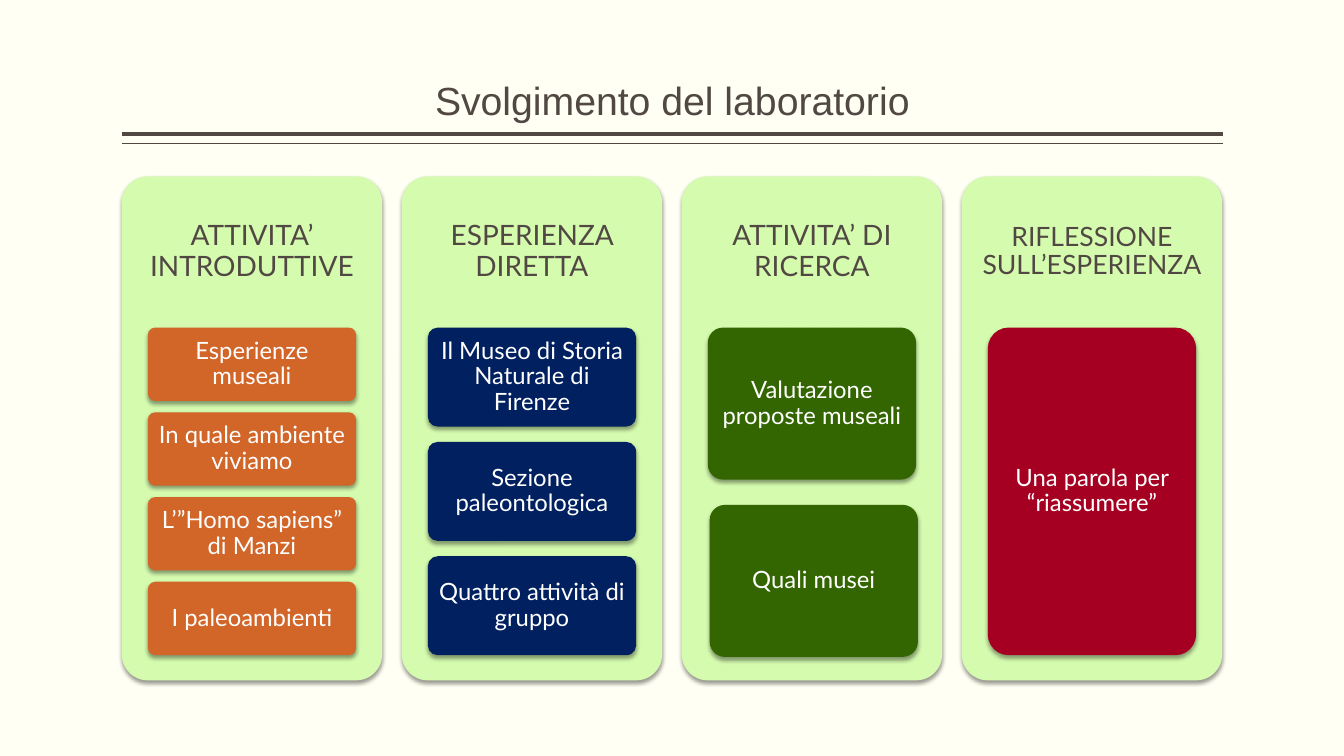
from dataclasses import dataclass

from lxml import etree
from pptx import Presentation
from pptx.dml.color import RGBColor
from pptx.enum.shapes import MSO_CONNECTOR, MSO_SHAPE
from pptx.enum.text import MSO_ANCHOR, MSO_AUTO_SIZE, PP_ALIGN
from pptx.oxml.ns import qn
from pptx.util import Pt

ROUNDED = MSO_SHAPE.ROUNDED_RECTANGLE
STRAIGHT = MSO_CONNECTOR.STRAIGHT
CENTER = PP_ALIGN.CENTER
MIDDLE, BOTTOM = MSO_ANCHOR.MIDDLE, MSO_ANCHOR.BOTTOM
NO_AUTOFIT = MSO_AUTO_SIZE.NONE


@dataclass(frozen=True)
class Theme:
    """Colours, fonts and type sizes of the slide."""
    background: str = "FFFFF3"
    ink: str = "514843"
    panel: str = "D5FBAF"
    card_text: str = "FFFFFF"
    orange: str = "D26528"
    navy: str = "002060"
    green: str = "336600"
    red: str = "A50021"
    title_font: str = "Arial"
    body_font: str = "Lato"
    title_size: int = 28
    heading_size: int = 20
    long_heading_size: int = 19
    card_size: int = 17


THEME = Theme()

LEFT, CONTENT_WIDTH = 87, 786.3
PANEL_TOP, PANEL_WIDTH, PANEL_HEIGHT, PANEL_PITCH = 126, 186, 360, 200
HEADING_HEIGHT = 108
CARD_INSET, CARDS_TOP, CARDS_HEIGHT = 18.6, 234, 234
CARD_GAP_RATIO = 0.154
CORNER = 0.1

PHASES = [
    ("ATTIVITA’ INTRODUTTIVE", THEME.heading_size, THEME.orange,
     ["Esperienze museali", "In quale ambiente viviamo",
      "L’”Homo sapiens” di Manzi", "I paleoambienti"]),
    ("ESPERIENZA DIRETTA", THEME.heading_size, THEME.navy,
     ["Il Museo di Storia Naturale di Firenze", "Sezione paleontologica",
      "Quattro attività di gruppo"]),
    ("ATTIVITA’ DI RICERCA", THEME.heading_size, THEME.green,
     ["Valutazione proposte museali", "Quali musei"]),
    ("RIFLESSIONE SULL’ESPERIENZA", THEME.long_heading_size, THEME.red,
     ["Una parola per “riassumere”"]),
]
NUDGES = {"Quali musei": 1.3}


def rgb(value):
    """Turn a hex string into a colour."""
    return RGBColor.from_string(value)


def set_text(shape, text, font, size, color, anchor, side, edge):
    """Fill a shape with one centred, wrapped paragraph."""
    frame = shape.text_frame
    frame.text = text
    frame.word_wrap = True
    frame.auto_size = NO_AUTOFIT
    frame.vertical_anchor = anchor
    frame.margin_left = frame.margin_right = Pt(side)
    frame.margin_top = frame.margin_bottom = Pt(edge)
    paragraph = frame.paragraphs[0]
    paragraph.alignment = CENTER
    paragraph.line_spacing = 0.9
    paragraph.space_before = Pt(0)
    paragraph.font.name = font
    paragraph.font.size = Pt(size)
    paragraph.font.bold = False
    paragraph.font.color.rgb = rgb(color)


def add_soft_shadow(shape):
    """Give a shape a small shadow falling straight down."""
    shape.shadow.inherit = False
    effects = shape._element.spPr.find(qn("a:effectLst"))
    shadow = etree.SubElement(
        effects, qn("a:outerShdw"), blurRad=str(Pt(3.1)), dist=str(Pt(2)),
        dir="5400000", algn="ctr", rotWithShape="0")
    black = etree.SubElement(shadow, qn("a:srgbClr"), val="000000")
    etree.SubElement(black, qn("a:alpha"), val="38000")


def add_rounded(slide, left, top, width, height, color):
    """Add a borderless rounded rectangle with a soft shadow."""
    box = slide.shapes.add_shape(ROUNDED, Pt(left), Pt(top), Pt(width), Pt(height))
    box.adjustments[0] = CORNER
    box.fill.solid()
    box.fill.fore_color.rgb = rgb(color)
    box.line.fill.background()
    add_soft_shadow(box)
    return box


def add_rule(slide, y, weight):
    """Add a horizontal rule across the content width."""
    rule = slide.shapes.add_connector(
        STRAIGHT, Pt(LEFT), Pt(y), Pt(LEFT + CONTENT_WIDTH), Pt(y))
    rule.line.color.rgb = rgb(THEME.ink)
    rule.line.width = Pt(weight)
    etree.SubElement(rule._element.spPr, qn("a:effectLst"))


def add_title(slide, text):
    """Place the title above the double rule."""
    title = slide.shapes.title
    title.left, title.top = Pt(LEFT), Pt(6)
    title.width, title.height = Pt(CONTENT_WIDTH), Pt(86)
    set_text(title, text, THEME.title_font, THEME.title_size, THEME.ink,
             BOTTOM, 0, 3.6)


def add_cards(slide, left, color, activities):
    """Stack equal cards so that they fill the card area."""
    count = len(activities)
    height = CARDS_HEIGHT / (count + (count - 1) * CARD_GAP_RATIO)
    pitch = height * (1 + CARD_GAP_RATIO)
    width = PANEL_WIDTH - 2 * CARD_INSET
    for row, activity in enumerate(activities):
        nudge = NUDGES.get(activity, 0)
        card = add_rounded(slide, left + CARD_INSET + nudge,
                           CARDS_TOP + row * pitch + nudge, width, height, color)
        set_text(card, activity, THEME.body_font, THEME.card_size,
                 THEME.card_text, MIDDLE, 3.4, 2.6)


def add_phase(slide, left, heading, heading_size, color, activities):
    """Add one phase: panel, heading and activity cards."""
    add_rounded(slide, left, PANEL_TOP, PANEL_WIDTH, PANEL_HEIGHT, THEME.panel)
    label = slide.shapes.add_textbox(
        Pt(left), Pt(PANEL_TOP), Pt(PANEL_WIDTH), Pt(HEADING_HEIGHT))
    set_text(label, heading, THEME.body_font, heading_size, THEME.ink,
             MIDDLE, 5.6, 5.6)
    add_cards(slide, left, color, activities)


def main():
    """Build and save the slide."""
    deck = Presentation()
    deck.slide_width, deck.slide_height = Pt(960), Pt(540)
    slide = deck.slides.add_slide(deck.slide_layouts[5])
    slide.background.fill.solid()
    slide.background.fill.fore_color.rgb = rgb(THEME.background)
    add_rule(slide, 95.8, 3)
    add_rule(slide, 102.6, 1)
    add_title(slide, "Svolgimento del laboratorio")
    for column, phase in enumerate(PHASES):
        add_phase(slide, LEFT + column * PANEL_PITCH, *phase)
    deck.save("out.pptx")


if __name__ == "__main__":
    main()
